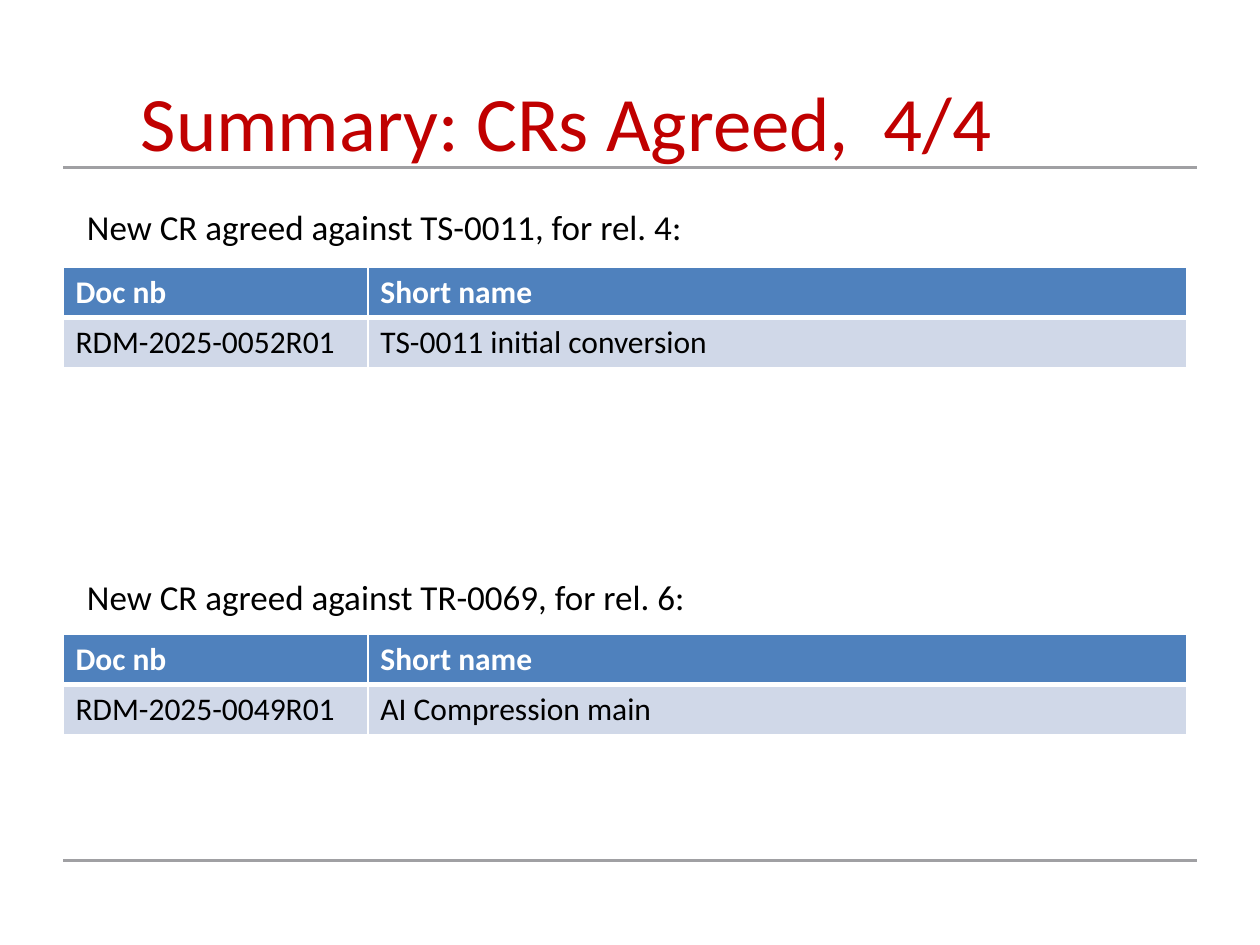
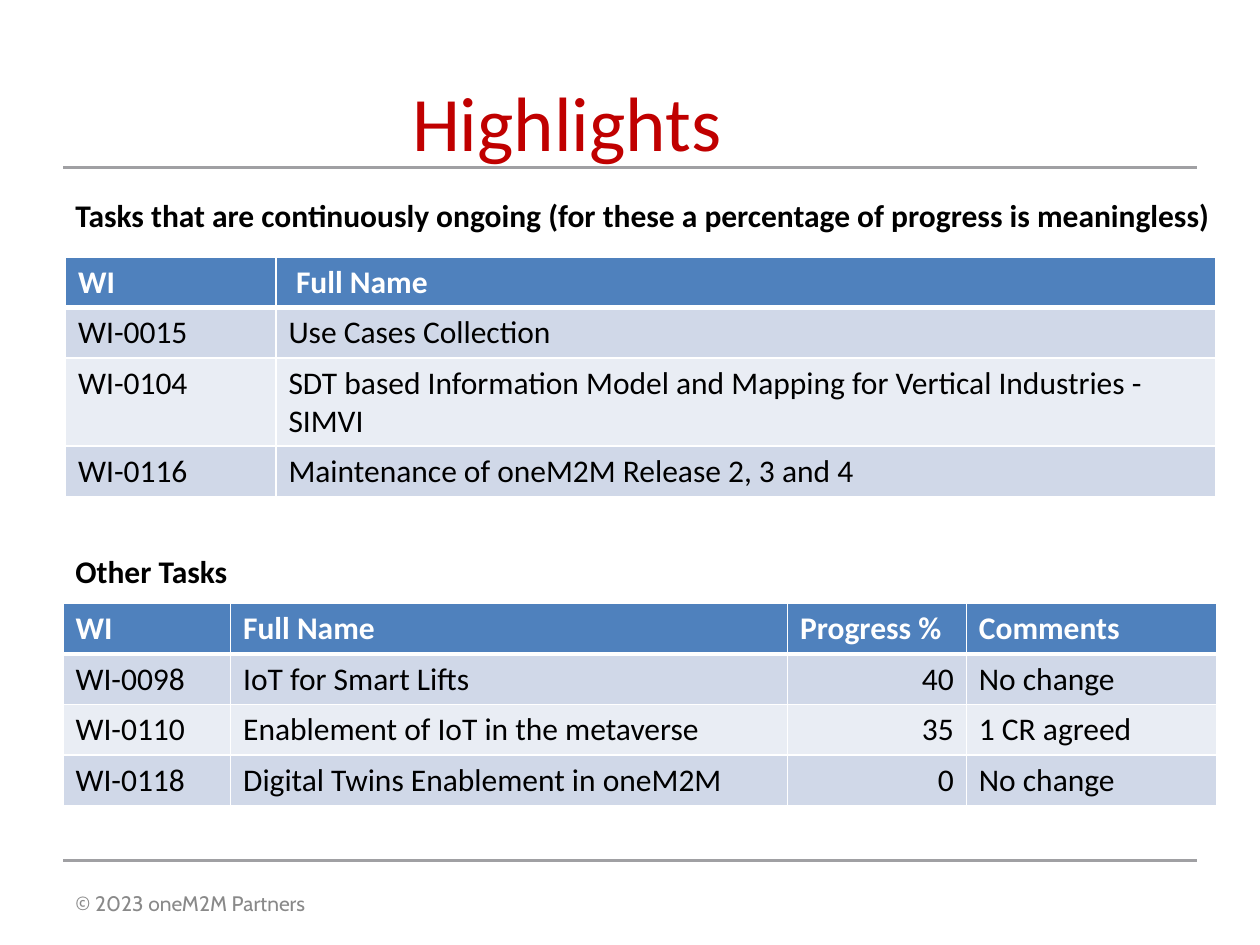
from dataclasses import dataclass

from lxml.etree import SubElement
from pptx import Presentation
from pptx.dml.color import RGBColor as Rgb
from pptx.enum.shapes import MSO_CONNECTOR as Conn
from pptx.enum.text import MSO_ANCHOR as Anchor, PP_ALIGN as Align
from pptx.oxml.ns import qn
from pptx.util import Inches, Pt

HUES = {
    "title": "C00000",
    "rule": "A0A0A3",
    "text": "000000",
    "white": "FFFFFF",
    "head": "4F81BD",
    "odd": "D0D8E8",
    "even": "E9EDF4",
    "foot": "898989",
}
RULES = (6.83, 1.33)
ROW = 0.4


@dataclass
class Label:
    text: str
    box: tuple[float, float, float, float]
    size: int = 18
    bold: bool = False
    color: str = "text"
    font: str = "Calibri"
    align: Align = Align.LEFT
    anchor: Anchor = Anchor.TOP
    left: float = 0.1
    top: float = 0.05


@dataclass
class Grid:
    left: float
    top: float
    cols: list[float]
    rows: list[list[str]]
    nudge: float = 0


def write(frame, text: str, *, size: int = 18, color: str = "text",
          font: str = "Calibri", bold: bool = False,
          align: Align = Align.LEFT) -> None:
    para = frame.paragraphs[0]
    para.alignment = align
    run = para.add_run()
    run.text = text
    run.font.size = Pt(size)
    run.font.name = font
    run.font.bold = bold
    run.font.color.rgb = Rgb.from_string(HUES[color])


def draw_rule(slide, top: float) -> None:
    line = slide.shapes.add_connector(
        Conn.STRAIGHT, Inches(0.5), Inches(top), Inches(9.5), Inches(top))
    line.line.color.rgb = Rgb.from_string(HUES["rule"])
    line.line.width = Pt(1.75)
    SubElement(line._element.spPr, qn("a:effectLst"))


def draw_label(slide, label: Label) -> None:
    frame = slide.shapes.add_textbox(*map(Inches, label.box)).text_frame
    frame.word_wrap = True
    frame.vertical_anchor = label.anchor
    frame.margin_left = Inches(label.left)
    frame.margin_top = Inches(label.top)
    write(frame, label.text, size=label.size, color=label.color,
          font=label.font, bold=label.bold, align=label.align)


def set_edges(cell, row: int) -> None:
    props = cell._tc.get_or_add_tcPr()
    for side in "LRTB":
        thick = (row, side) in ((0, "B"), (1, "T"))
        edge = SubElement(props, qn(f"a:ln{side}"), w=str(Pt(3 if thick else 1)))
        fill = SubElement(edge, qn("a:solidFill"))
        SubElement(fill, qn("a:srgbClr"), val=HUES["white"])


def draw_grid(slide, grid: Grid) -> None:
    count = len(grid.rows)
    table = slide.shapes.add_table(
        count, len(grid.cols), Inches(grid.left), Inches(grid.top),
        Inches(sum(grid.cols)), Inches(ROW * count)).table
    for col, width in zip(table.columns, grid.cols):
        col.width = Inches(width)
    for r, texts in enumerate(grid.rows):
        head = r == 0
        table.rows[r].height = Inches(ROW)
        hue = "head" if head else "odd" if r % 2 else "even"
        for c, text in enumerate(texts):
            cell = table.cell(r, c)
            set_edges(cell, r)
            cell.fill.solid()
            cell.fill.fore_color.rgb = Rgb.from_string(HUES[hue])
            if head and c == 1:
                cell.margin_left = Inches(0.1 + grid.nudge)
            write(cell.text_frame, text, bold=head,
                  color="white" if head else "text",
                  align=Align.RIGHT if text.isdigit() else Align.LEFT)


def add_page(deck, title: str, height: float, parts: list[Label | Grid]) -> None:
    slide = deck.slides.add_slide(deck.slide_layouts[6])
    for top in RULES:
        draw_rule(slide, top)
    draw_label(slide, Label(title, (0, 0.5, 9, height), size=44, color="title",
                            align=Align.CENTER, top=0.09))
    for part in parts:
        if isinstance(part, Grid):
            draw_grid(slide, part)
        else:
            draw_label(slide, part)


def agreed(spec: str, top: float, start: float, doc: str, name: str) -> list[Label | Grid]:
    return [
        Label(f"New CR agreed against {spec}:", (0.5, top, 8.75, 0.5),
              size=20, left=0.19),
        Grid(0.5, start, [2.42, 6.5], [["Doc nb", "Short name"], [doc, name]]),
    ]


def main() -> None:
    deck = Presentation()
    deck.slide_width = Inches(10)
    deck.slide_height = Inches(7.5)
    add_page(deck, "Summary: CRs Agreed,  4/4", 0.92, [
        *agreed("TR-0069, for rel. 6", 4.52, 5.03,
                "RDM-2025-0049R01", "AI Compression main"),
        *agreed("TS-0011, for rel. 4", 1.58, 2.12,
                "RDM-2025-0052R01", "TS-0011 initial conversion"),
    ])
    add_page(deck, "Highlights", 1.25, [
        Grid(0.52, 2.04, [1.67, 7.46], [
            ["WI", "Full Name"],
            ["WI-0015", "Use Cases Collection"],
            ["WI-0104", "SDT based Information Model and Mapping for "
                        "Vertical Industries - SIMVI"],
            ["WI-0116", "Maintenance of oneM2M Release 2, 3 and 4"],
        ], nudge=0.06),
        Label("© 2023 oneM2M Partners", (0.5, 6.83, 9, 0.67), size=12,
              color="foot", font="Cabin", anchor=Anchor.MIDDLE),
        Grid(0.5, 4.79, [1.33, 4.42, 1.42, 1.99], [
            ["WI", "Full Name", "Progress %", "Comments"],
            ["WI-0098", "IoT for Smart Lifts", "40", "No change"],
            ["WI-0110", "Enablement of IoT in the metaverse", "35", "1 CR agreed"],
            ["WI-0118", "Digital Twins Enablement in oneM2M", "0", "No change"],
        ]),
        Label("Tasks that are continuously ongoing (for these a percentage "
              "of progress is meaningless)", (0.5, 1.51, 9.27, 0.4), bold=True),
        Label("Other Tasks", (0.5, 4.33, 1.42, 0.4), bold=True),
    ])
    deck.save("out.pptx")


if __name__ == "__main__":
    main()
